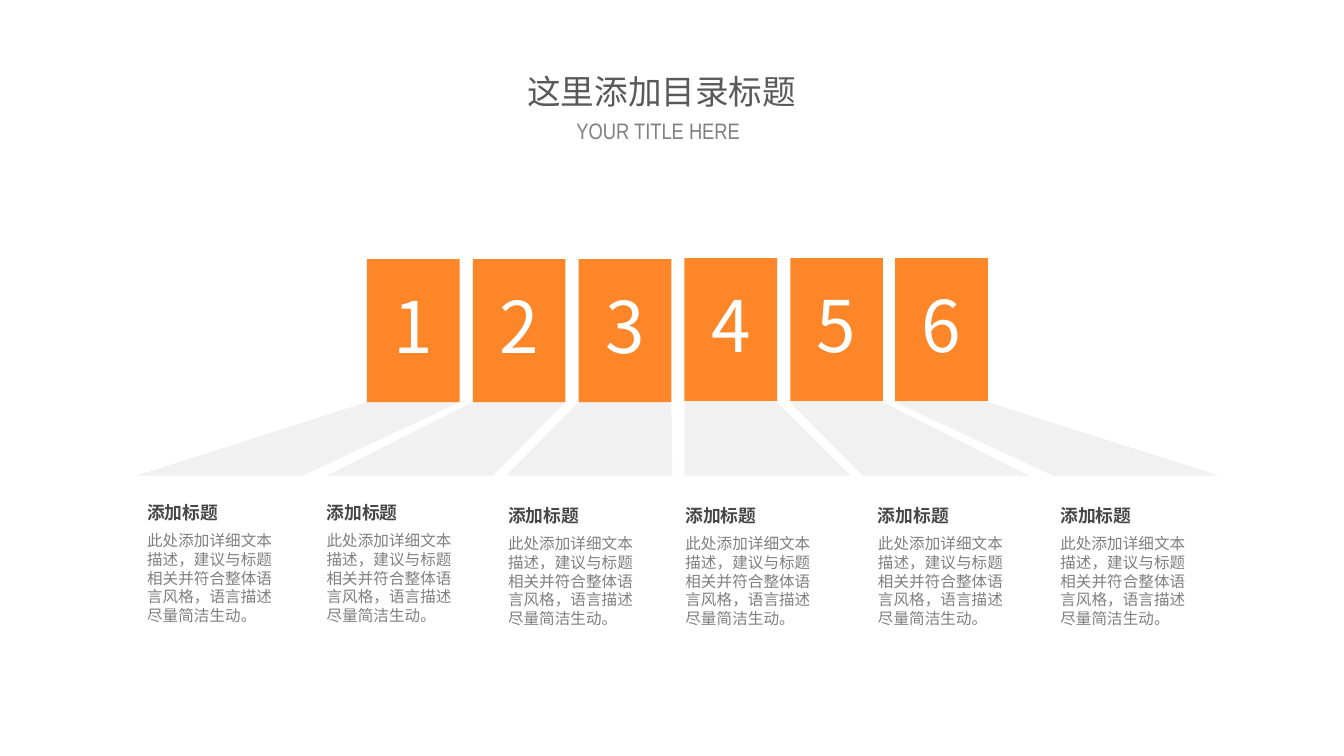
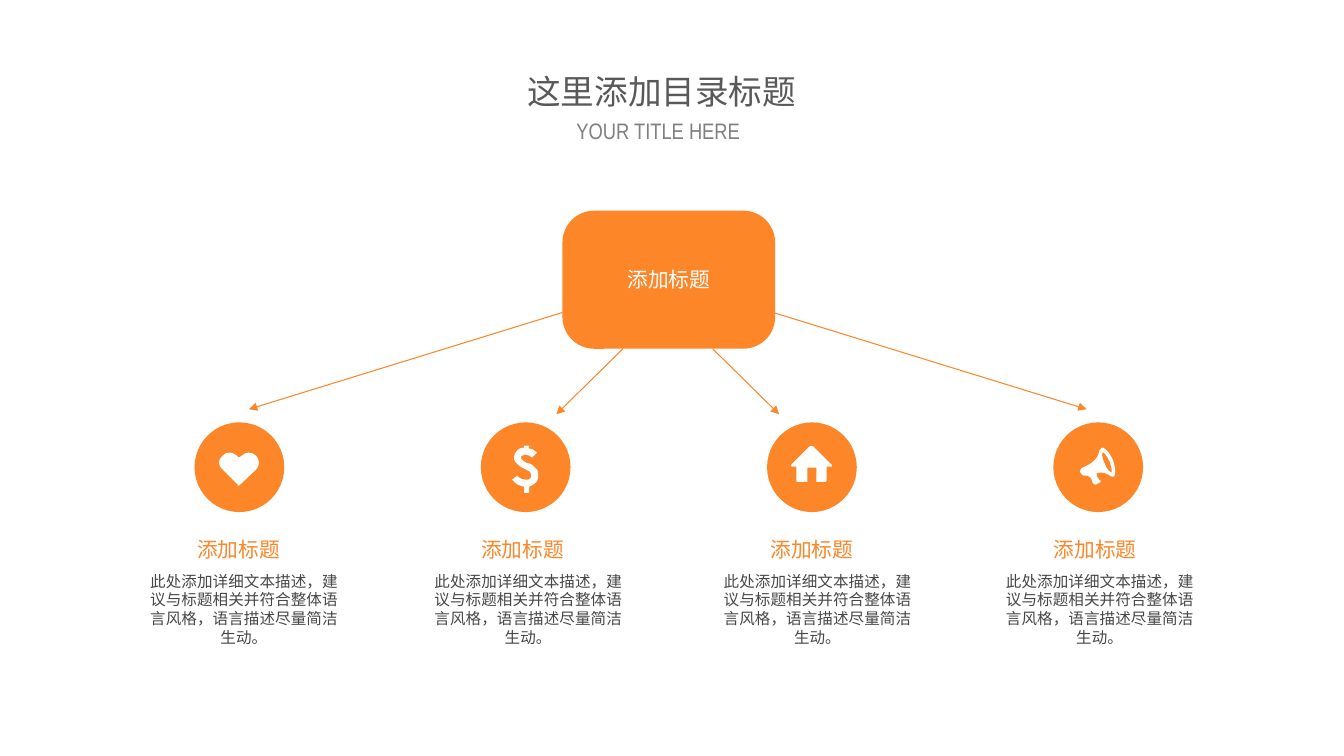
import pptx
import pptx.util
import pptx.dml.color
import pptx.enum.shapes
import pptx.enum.text
import pptx.oxml.ns
from lxml import etree

ORANGE = pptx.dml.color.RGBColor(0xFC, 0x86, 0x28)
WHITE = pptx.dml.color.RGBColor(0xFF, 0xFF, 0xFF)
BEAM_GREY = pptx.dml.color.RGBColor(0xF1, 0xF1, 0xF1)
DARK_GREY = pptx.dml.color.RGBColor(0x47, 0x47, 0x47)
MID_GREY = pptx.dml.color.RGBColor(0x7F, 0x7F, 0x7F)
TITLE_GREY = pptx.dml.color.RGBColor(0x59, 0x59, 0x59)
SUBTITLE_GREY = pptx.dml.color.RGBColor(0x80, 0x80, 0x80)

SCALE = 9144  # EMU per px, 100 px to the inch
CJK_FONT = "Noto Sans CJK JP"
LINE_HEIGHT = 1.2
SHAPE = pptx.enum.shapes.MSO_SHAPE
ALIGN = pptx.enum.text.PP_ALIGN
ANCHOR = pptx.enum.text.MSO_ANCHOR

TITLE = "这里添加目录标题"
SUBTITLE = "YOUR TITLE HERE"
HEADING = "添加标题"
DETAIL = "此处添加详细文本描述，建议与标题相关并符合整体语言风格，语言描述尽量简洁生动。"

# Number, left edge of the beam's foot, left and top of the column text
COLUMNS = [
    ("1", 135, 146, 498),
    ("2", 324, 324, 498),
    ("3", 502, 504, 501),
    ("4", 679, 680, 501),
    ("5", 856, 871, 501),
    ("6", 1045, 1052, 501),
]

# Outlines measured from the corner of the circle: pairs are line ends,
# sixes are curves (two control points and an end)
HEART = [[
    (61, 33), (57, 29, 51, 29, 47, 33), (44, 35), (42, 33),
    (38, 29, 31, 29, 28, 33), (23, 37, 23, 43, 28, 47), (44, 63), (61, 47),
    (65, 43, 65, 37, 61, 33),
]]
DOLLAR = [[
    (56, 30), (51, 35), (49, 33, 46, 32, 44, 32), (43, 32, 42, 32, 41, 33),
    (40, 33, 40, 34, 40, 35), (40, 36, 40, 37, 41, 37),
    (42, 38, 43, 39, 45, 40), (49, 41, 52, 42, 53, 44),
    (54, 45, 55, 46, 56, 47), (57, 49, 57, 51, 57, 52),
    (57, 54, 57, 56, 56, 58), (55, 59, 54, 61, 53, 61),
    (52, 62, 50, 63, 48, 64), (48, 70), (43, 70), (43, 64),
    (41, 63, 39, 63, 37, 62), (35, 61, 33, 59, 31, 57), (36, 53),
    (39, 56, 42, 57, 45, 57), (46, 57, 48, 57, 49, 56),
    (50, 55, 50, 54, 50, 52), (50, 51, 50, 50, 49, 49),
    (49, 49, 47, 48, 45, 47), (41, 45, 39, 44, 37, 42),
    (36, 41, 35, 40, 34, 39), (33, 38, 33, 36, 33, 35),
    (33, 32, 34, 30, 36, 28), (38, 26, 40, 25, 43, 25), (43, 23), (48, 23),
    (48, 26), (49, 26, 51, 27, 52, 27), (53, 28, 54, 29, 56, 30),
]]
HOUSE = [[
    (64, 42), (46, 24), (45, 23, 43, 23, 42, 24), (24, 42),
    (23, 43, 24, 44, 25, 44), (29, 44), (29, 58), (29, 59, 29, 59, 31, 59),
    (40, 59), (40, 45), (49, 45), (49, 59), (58, 59),
    (59, 59, 59, 59, 59, 58), (59, 44), (63, 44), (65, 44, 65, 43, 64, 42),
]]
MEGAPHONE = [
    [
        (58, 50), (57, 50, 53, 47, 51, 41), (48, 35, 48, 30, 49, 30),
        (50, 29, 53, 33, 56, 39), (58, 45, 58, 49, 58, 50),
    ],
    [
        (59, 37), (56, 30, 50, 24, 48, 25), (43, 27, 50, 36, 29, 45),
        (27, 45, 26, 49, 27, 50), (28, 52, 30, 54, 32, 53),
        (33, 53, 34, 53, 34, 53), (35, 55, 37, 53, 37, 55),
        (38, 56, 39, 59, 39, 60), (40, 61, 41, 62, 42, 62),
        (42, 61, 45, 61, 46, 60), (47, 60, 47, 59, 47, 58),
        (46, 58, 45, 57, 45, 56), (44, 56, 43, 53, 43, 52),
        (42, 51, 43, 50, 45, 50), (55, 49, 56, 55, 60, 54),
        (62, 53, 62, 45, 59, 37),
    ],
]

# Icon, left edge of its heading and of its detail
BRANCHES = [
    (HEART, 136, 142),
    (DOLLAR, 418, 424),
    (HOUSE, 705, 711),
    (MEGAPHONE, 986, 991),
]

# Left-hand arrows; the right-hand ones mirror them
ARROWS = [((618, 346), (552, 411)), ((558, 310), (247, 406))]
MIRROR_SUM = 1325


def px(*lengths):
    return [pptx.util.Emu(round(length * SCALE)) for length in lengths]


def paint(shape, color):
    shape.shadow.inherit = False
    shape.fill.solid()
    shape.fill.fore_color.rgb = color
    shape.line.fill.background()


def write(shape, text, size, color, font=CJK_FONT, bold=False,
          align=ALIGN.CENTER, anchor=ANCHOR.TOP, margins=(0, 0, 0, 0)):
    frame = shape.text_frame
    left, top, right, bottom = px(*margins)
    frame_format = {
        "word_wrap": True, "auto_size": pptx.enum.text.MSO_AUTO_SIZE.NONE,
        "vertical_anchor": anchor, "margin_left": left, "margin_top": top,
        "margin_right": right, "margin_bottom": bottom,
    }
    for name, value in frame_format.items():
        setattr(frame, name, value)
    paragraph = frame.paragraphs[0]
    paragraph.alignment = align
    paragraph.space_before = pptx.util.Pt(0)
    paragraph.line_spacing = (
        pptx.util.Pt(size * LINE_HEIGHT) if font == CJK_FONT else 1.0)
    run = paragraph.add_run()
    run.text = text
    font_format = {"size": pptx.util.Pt(size), "name": font, "bold": bold}
    for name, value in font_format.items():
        setattr(run.font, name, value)
    run.font.color.rgb = color
    east_asian = etree.SubElement(
        run.font._element, pptx.oxml.ns.qn("a:ea"))
    east_asian.set("typeface", font)


def add_text(slide, box, *args, **formats):
    write(slide.shapes.add_textbox(*px(*box)), *args, **formats)


def bend(shape, segments, left, top):
    """Turn the straight segments that have control points into curves."""
    lines = list(shape._element.iter(pptx.oxml.ns.qn("a:lnTo")))
    for line, segment in zip(lines, segments):
        if len(segment) == 2:
            continue
        line.tag = pptx.oxml.ns.qn("a:cubicBezTo")
        for position, axis in enumerate((0, 2)):
            x, y = px(left + segment[axis], top + segment[axis + 1])
            control = etree.Element(pptx.oxml.ns.qn("a:pt"))
            control.set("x", str(x - shape.left))
            control.set("y", str(y - shape.top))
            line.insert(position, control)


def add_outline(shapes, outlines, color, left=0, top=0):
    builder = None
    for outline in outlines:
        first, *rest = [
            px(left + segment[-2], top + segment[-1]) for segment in outline]
        if builder is None:
            builder = shapes.build_freeform(*first, scale=1.0)
        else:
            builder.move_to(*first)
        builder.add_line_segments(rest, close=True)
    shape = builder.convert_to_shape()
    bend(shape, [s for outline in outlines for s in outline[1:]], left, top)
    paint(shape, color)


def add_arrow(slide, start, end):
    arrow = slide.shapes.add_connector(
        pptx.enum.shapes.MSO_CONNECTOR.STRAIGHT, *px(*start, *end))
    arrow.line.color.rgb = ORANGE
    arrow.line.width = pptx.util.Pt(0.75)
    properties = arrow._element.spPr
    head = etree.SubElement(
        properties.find(pptx.oxml.ns.qn("a:ln")), pptx.oxml.ns.qn("a:tailEnd"))
    head.set("type", "triangle")
    etree.SubElement(properties, pptx.oxml.ns.qn("a:effectLst"))


def add_titled_slide(deck):
    slide = deck.slides.add_slide(deck.slide_layouts[0])
    headers = [
        (TITLE, (507, 63, 299, 54), 24, TITLE_GREY, "Roboto"),
        (SUBTITLE, (557, 109, 192, 40), 16, SUBTITLE_GREY, "Arial Narrow"),
    ]
    for holder, (text, box, size, color, font) in zip(
            slide.placeholders, headers):
        holder.left, holder.top, holder.width, holder.height = px(*box)
        write(holder, text, size, color, font, margins=(13, 7, 13, 7))
    return slide


def build_number_slide(deck):
    slide = add_titled_slide(deck)
    card_left, card_width, card_height, card_step = 364, 92, 142, 104.9
    beam_top, foot_y, foot_width = 399, 472, 165
    for index, (number, foot, text_left, text_top) in enumerate(COLUMNS):
        left = round(card_left + index * card_step)
        card_top = 257 - index // 3
        add_outline(slide.shapes, [[
            (left, beam_top), (left + card_width, beam_top),
            (foot + foot_width, foot_y), (foot, foot_y)]], BEAM_GREY)
        card = slide.shapes.add_shape(
            SHAPE.RECTANGLE, *px(left, card_top, card_width, card_height))
        paint(card, ORANGE)
        write(card, number, 50.8, WHITE, anchor=ANCHOR.MIDDLE,
              margins=(0, 0, 0, 11))
        add_text(slide, (text_left, text_top, 136, 21), HEADING, 12.7,
                 DARK_GREY, bold=True, align=ALIGN.LEFT)
        add_text(slide, (text_left, text_top + 29, 136, 93), DETAIL, 11.1,
                 MID_GREY, align=ALIGN.LEFT)


def build_branch_slide(deck):
    slide = add_titled_slide(deck)
    hub = slide.shapes.add_shape(
        SHAPE.ROUNDED_RECTANGLE, *px(558, 209, 211, 137))
    hub.adjustments[0] = 0.23
    paint(hub, ORANGE)
    write(hub, HEADING, 14.8, WHITE, anchor=ANCHOR.MIDDLE)
    circle_left, circle_top, circle_size, circle_step = 193, 419, 89, 284
    for index, (icon, heading_left, detail_left) in enumerate(BRANCHES):
        left = circle_left + index * circle_step
        badge = slide.shapes.add_group_shape()
        circle = badge.shapes.add_shape(
            SHAPE.OVAL, *px(left, circle_top, circle_size, circle_size))
        paint(circle, ORANGE)
        add_outline(badge.shapes, icon, WHITE, left, circle_top)
        add_text(slide, (heading_left, 530, 201, 34), HEADING, 14.8, ORANGE,
                 anchor=ANCHOR.MIDDLE, margins=(0, 0, 0, 4))
        add_text(slide, (detail_left, 567, 200, 56), DETAIL, 11.1, DARK_GREY)
    for start, end in ARROWS:
        add_arrow(slide, start, end)
        add_arrow(slide, *((MIRROR_SUM - x, y) for x, y in (start, end)))


def main():
    deck = pptx.Presentation()
    deck.slide_width, deck.slide_height = px(1333.33, 750)
    build_number_slide(deck)
    build_branch_slide(deck)
    deck.save("out.pptx")


if __name__ == "__main__":
    main()
